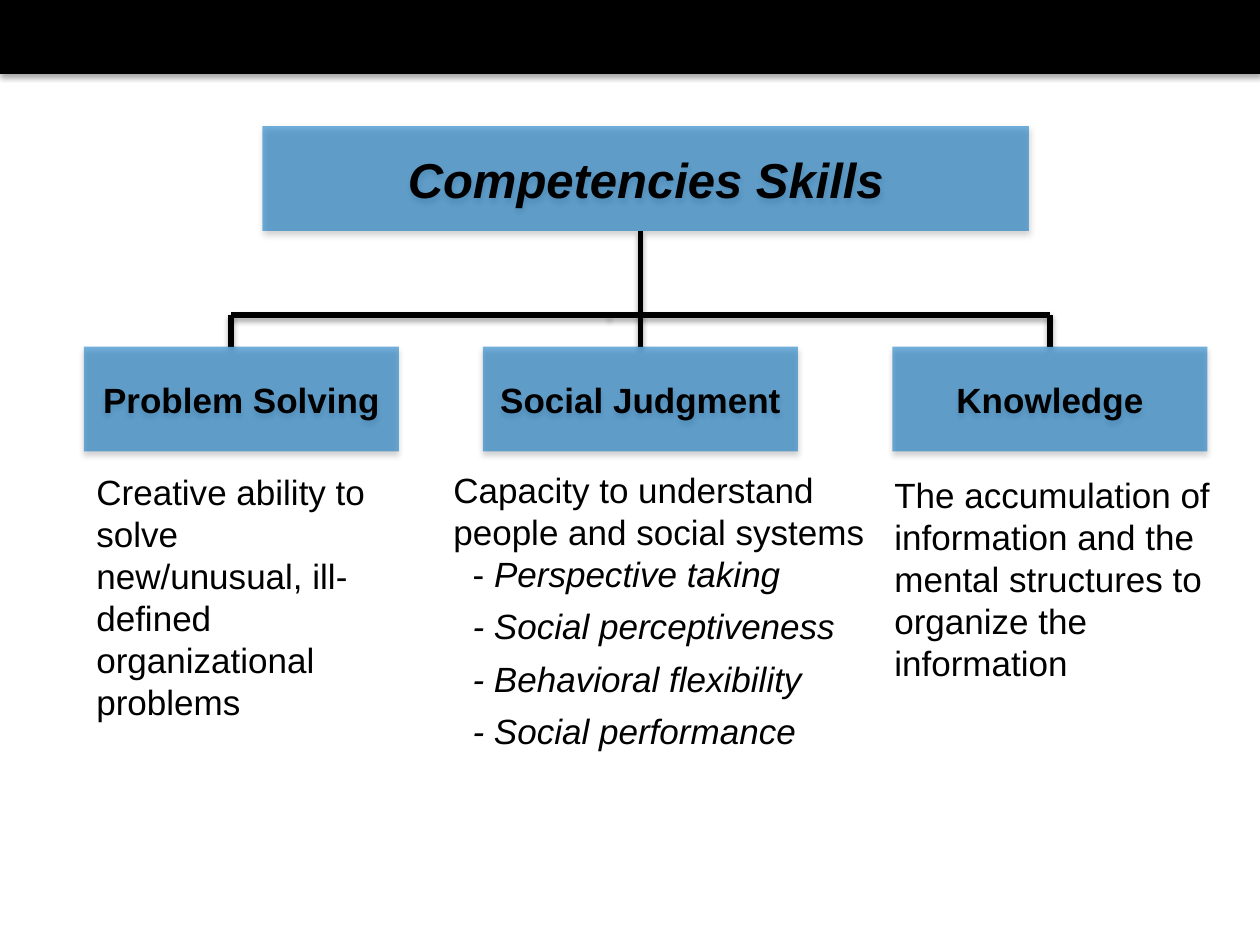
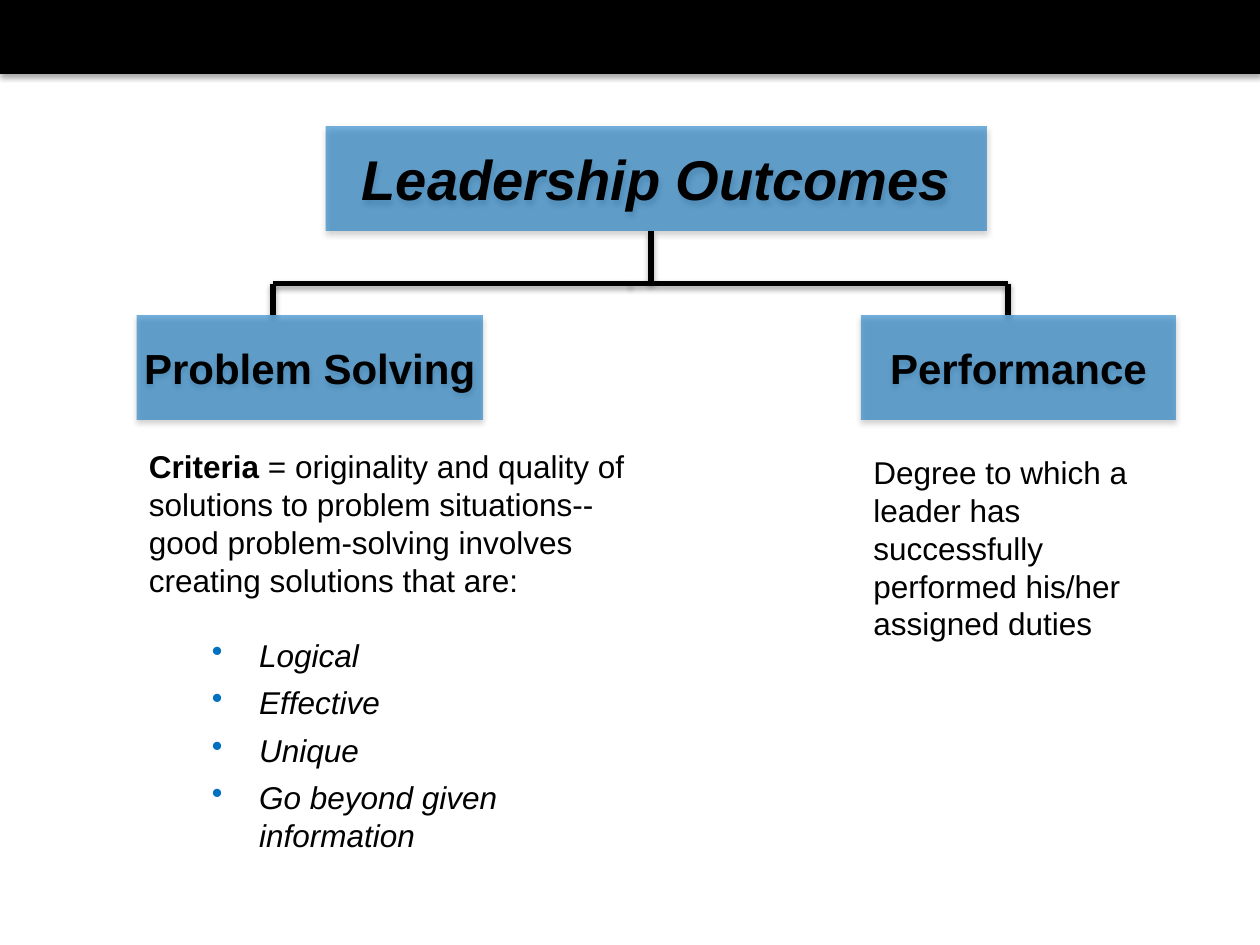
from lxml import etree
from pptx import Presentation
from pptx.dml.color import RGBColor
from pptx.enum.shapes import MSO_CONNECTOR, MSO_SHAPE
from pptx.enum.text import MSO_ANCHOR, MSO_AUTO_SIZE, PP_ALIGN
from pptx.oxml.ns import qn
from pptx.util import Pt

RECTANGLE = MSO_SHAPE.RECTANGLE
STRAIGHT = MSO_CONNECTOR.STRAIGHT
MIDDLE = MSO_ANCHOR.MIDDLE
CENTER = PP_ALIGN.CENTER
GROW = MSO_AUTO_SIZE.SHAPE_TO_FIT_TEXT

COLORS = {"black": "000000", "blue": "0070C0"}
BLACK = RGBColor.from_string(COLORS["black"])
BLUE = RGBColor.from_string(COLORS["blue"])
FONT = "Arial"
SLIDE_WIDTH, SLIDE_HEIGHT = 720, 540
BAND_HEIGHT = 42
HEADING_TOP, BOX_HEIGHT = 72, 60

# Boxes: left, width, text. Notes: left, top, width, height, lead, text, items.
CHARTS = [
    {
        "heading": (150, 438, "Competencies Skills"), "heading_size": 28,
        "branches": [(48, 180, "Problem Solving"),
                     (276, 180, "Social Judgment"),
                     (510, 180, "Knowledge")],
        "branch_size": 20, "branch_top": 198,
        "trunk": 366, "hub": 348, "rail": 180, "drops": [132, 366, 600],
        "note_size": 20, "bulleted": False,
        "notes": [
            (48, 265.5, 180, 152.5, "",
             "Creative ability to solve new/unusual, ill-defined "
             "organizational problems", []),
            (252, 264, 252, 198.5, "",
             "Capacity to understand people and social systems",
             ["Perspective taking", "Social perceptiveness",
              "Behavioral flexibility", "Social performance"]),
            (504, 267, 216, 128, "",
             "The accumulation of information and the mental structures "
             "to organize the information", []),
        ],
    },
    {
        "heading": (186, 378, "Leadership Outcomes"), "heading_size": 32,
        "branches": [(78, 198, "Problem Solving"),
                     (492, 180, "Performance")],
        "branch_size": 24, "branch_top": 180,
        "trunk": 372, "hub": 360, "rail": 162, "drops": [156, 576],
        "note_size": 18, "bulleted": True,
        "notes": [
            (78, 252, 306, 245, "Criteria",
             " = originality and quality of solutions to problem "
             "situations--good problem-solving involves creating solutions "
             "that are:",
             ["Logical", "Effective", "Unique",
              "Go beyond given information"]),
            (492, 255.5, 180, 116.5, "",
             "Degree to which a leader has successfully performed his/her "
             "assigned duties", []),
        ],
    },
]


def add_shadow(effects, alpha, blur, distance):
    """Add a downward black shadow to an a:effectLst element."""
    shadow = etree.SubElement(
        effects, qn("a:outerShdw"), blurRad=str(Pt(blur)),
        dist=str(Pt(distance)), dir="5400000", rotWithShape="0")
    color = etree.SubElement(shadow, qn("a:srgbClr"), val=COLORS["black"])
    etree.SubElement(color, qn("a:alpha"), val=str(alpha * 1000))


def style_paragraph(paragraph, size):
    paragraph.line_spacing = Pt(size * 1.2)
    paragraph.font.name = FONT
    paragraph.font.size = Pt(size)
    paragraph.font.color.rgb = BLACK


prs = Presentation()
prs.slide_width, prs.slide_height = Pt(SLIDE_WIDTH), Pt(SLIDE_HEIGHT)

for chart in CHARTS:
    slide = prs.slides.add_slide(prs.slide_layouts[6])
    shapes = slide.shapes

    band = shapes.add_shape(RECTANGLE, 0, 0, Pt(SLIDE_WIDTH), Pt(BAND_HEIGHT))
    band.fill.solid()
    band.fill.fore_color.rgb = BLACK
    band.line.color.rgb = BLACK
    band.line.width = Pt(0.75)
    band.shadow.inherit = False
    add_shadow(band._element.spPr.find(qn("a:effectLst")), 35, 3.1, 1.8)

    # Tree lines: trunk, the two halves of the rail, one drop per branch
    rail, drops = chart["rail"], chart["drops"]
    lines = [(chart["trunk"], HEADING_TOP + BOX_HEIGHT, chart["trunk"], rail)]
    lines += [(chart["hub"], rail, end, rail) for end in (drops[0], drops[-1])]
    lines += [(x, rail, x, chart["branch_top"]) for x in drops]
    for ends in lines:
        branch_line = shapes.add_connector(STRAIGHT, *map(Pt, ends))
        branch_line.line.color.rgb = BLACK
        branch_line.line.width = Pt(3)
        effects = etree.SubElement(branch_line._element.spPr,
                                   qn("a:effectLst"))
        add_shadow(effects, 35, 3.1, 1.8)

    boxes = [(chart["heading"], HEADING_TOP, chart["heading_size"], True)]
    boxes += [(branch, chart["branch_top"], chart["branch_size"], False)
              for branch in chart["branches"]]
    for (left, width, label), top, size, italic in boxes:
        box = shapes.add_shape(RECTANGLE, Pt(left), Pt(top),
                               Pt(width), Pt(BOX_HEIGHT))
        box.fill.solid()
        box.fill.fore_color.rgb = BLUE
        fill_color = box._element.spPr.find(
            qn("a:solidFill") + "/" + qn("a:srgbClr"))
        etree.SubElement(fill_color, qn("a:alpha"), val="54000")
        box.line.fill.background()
        box.shadow.inherit = False
        add_shadow(box._element.spPr.find(qn("a:effectLst")), 32, 3.5, 2.2)
        frame = box.text_frame
        frame.word_wrap = False
        frame.vertical_anchor = MIDDLE
        paragraph = frame.paragraphs[0]
        paragraph.text = label
        paragraph.alignment = CENTER
        style_paragraph(paragraph, size)
        paragraph.font.bold = True
        paragraph.font.italic = italic

    size = chart["note_size"]
    for left, top, width, height, lead, text, items in chart["notes"]:
        note = shapes.add_textbox(Pt(left), Pt(top), Pt(width), Pt(height))
        frame = note.text_frame
        frame.word_wrap = True
        frame.auto_size = GROW
        paragraph = frame.paragraphs[0]
        style_paragraph(paragraph, size)
        if lead:
            lead_run = paragraph.add_run()
            lead_run.text = lead
            lead_run.font.bold = True
        paragraph.add_run().text = text

        for index, item in enumerate(items):
            paragraph = frame.add_paragraph()
            properties = paragraph._p.get_or_add_pPr()
            if chart["bulleted"]:
                properties.set("marL", str(Pt(63)))
                properties.set("indent", str(Pt(-27)))
                bullet_color = etree.SubElement(properties, qn("a:buClr"))
                etree.SubElement(bullet_color, qn("a:srgbClr"),
                                 val=COLORS["blue"])
                etree.SubElement(properties, qn("a:buChar"), char="•")
                if index == 0:
                    paragraph.space_before = Pt(size * 1.2)
            else:
                properties.set("marL", str(Pt(11)))
                dash = paragraph.add_run()
                dash.text = "- "
                dash.font.italic = index > 0
            paragraph.space_after = Pt(size * 0.3)
            style_paragraph(paragraph, size)
            item_run = paragraph.add_run()
            item_run.text = item
            item_run.font.italic = True

prs.save("out.pptx")
